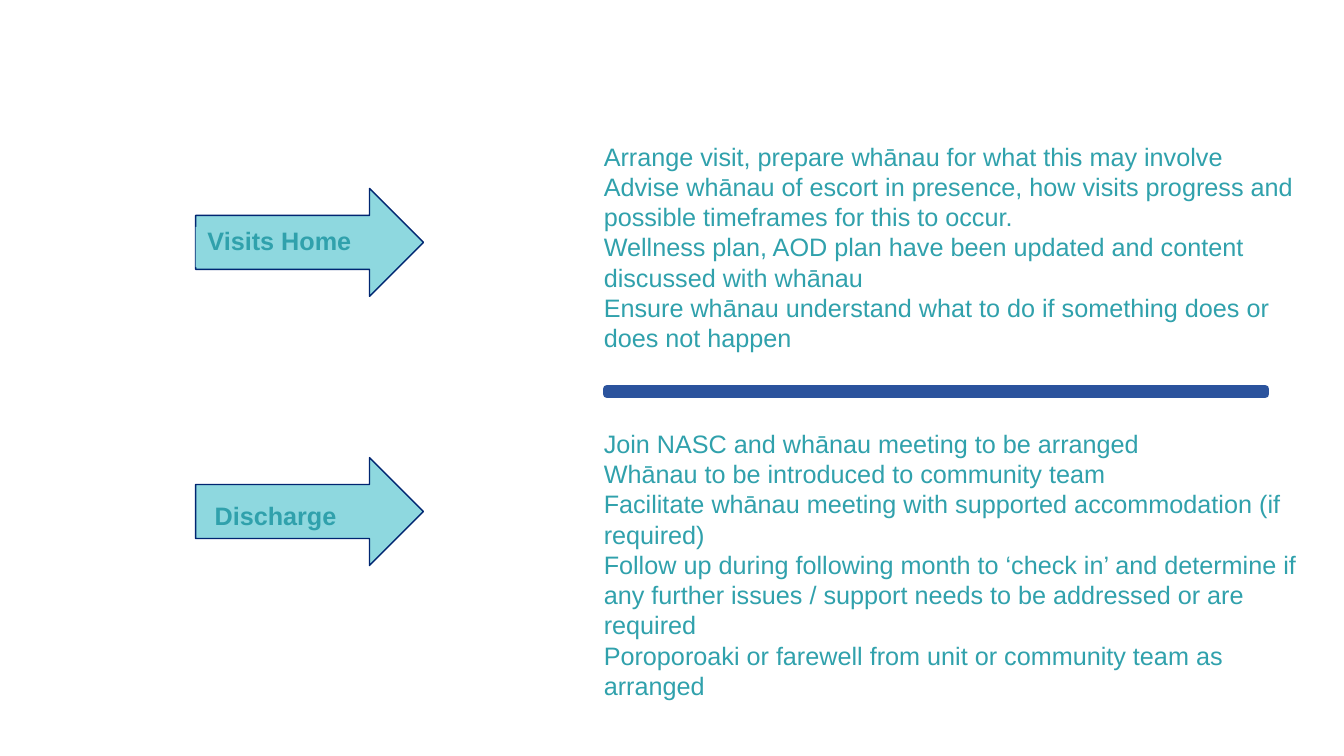
import pptx
import pptx.util
import pptx.dml.color
import pptx.enum.shapes
import pptx.enum.text
from lxml import etree

Inches = pptx.util.Inches
SHAPES = pptx.enum.shapes.MSO_SHAPE

TEAL, AQUA, NAVY, BLUE = "30A1AC", "8ED8DF", "002671", "2B539D"

STAGES = [
    {
        "label": "Visits Home",
        "arrow_top": 1.87,
        "label_box": (1.96, 2.19, 1.77, 0.4),
        "patches": [(1.94, 2.25, 1.97, 0.4)],
        "steps_box": (5.89, 1.35, 7.3, 2.22),
        "steps": [
            "Arrange visit, prepare whānau for what this may involve",
            "Advise whānau of escort in presence, how visits progress and possible timeframes for this to occur.",
            "Wellness plan, AOD plan have been updated and content discussed with whānau",
            "Ensure whānau understand what to do if something does or does not happen",
        ],
    },
    {
        "label": "Discharge",
        "arrow_top": 4.54,
        "label_box": (2.03, 4.91, 1.59, 0.4),
        "patches": [],
        "steps_box": (5.89, 4.2, 7.27, 2.83),
        "steps": [
            "Join NASC and whānau meeting to be arranged",
            "Whānau to be introduced to community team",
            "Facilitate whānau meeting with supported accommodation (if required)",
            "Follow up during following month to ‘check in’ and determine if any further issues / support needs to be addressed or are required",
            "Poroporoaki or farewell from unit or community team as arranged",
        ],
    },
]
ARROW_LEFT, ARROW_WIDTH, ARROW_HEIGHT = 1.94, 2.26, 1.07
DIVIDER = (6.02, 3.86, 6.53, 0.05)


def color(hex_code):
    return pptx.dml.color.RGBColor.from_string(hex_code)


def add_filled(slide, kind, box, fill, line=None, width=1):
    shape = slide.shapes.add_shape(kind, *map(Inches, box))
    shape.shadow.inherit = False
    shape.fill.solid()
    shape.fill.fore_color.rgb = color(fill)
    if line:
        shape.line.color.rgb = color(line)
        shape.line.width = pptx.util.Pt(width)
    else:
        shape.line.fill.background()
    return shape


def write(shape, lines, bold=False):
    frame = shape.text_frame
    frame.word_wrap = True
    frame.vertical_anchor = pptx.enum.text.MSO_ANCHOR.TOP
    for index, line in enumerate(lines):
        paragraph = frame.add_paragraph() if index else frame.paragraphs[0]
        paragraph.alignment = pptx.enum.text.PP_ALIGN.LEFT
        run = paragraph.add_run()
        run.text = line
        run.font.name = "Arial"
        run.font.size = pptx.util.Pt(18)
        run.font.bold = bold
        run.font.color.rgb = color(TEAL)


def add_stage(slide, stage):
    arrow_box = (ARROW_LEFT, stage["arrow_top"], ARROW_WIDTH, ARROW_HEIGHT)
    add_filled(slide, SHAPES.RIGHT_ARROW, arrow_box, AQUA, NAVY)
    for patch in stage["patches"]:
        add_filled(slide, SHAPES.RECTANGLE, patch, AQUA)
    label = add_filled(slide, SHAPES.RECTANGLE, stage["label_box"], AQUA)
    write(label, [stage["label"]], bold=True)
    steps = slide.shapes.add_textbox(*map(Inches, stage["steps_box"]))
    write(steps, stage["steps"])


def main():
    deck = pptx.Presentation()
    deck.slide_width, deck.slide_height = Inches(13.33), Inches(7.5)
    slide = deck.slides.add_slide(deck.slide_layouts[6])
    for stage in STAGES:
        add_stage(slide, stage)
    divider = add_filled(slide, SHAPES.RECTANGLE, DIVIDER, BLUE, BLUE, 6)
    outline = divider.line.fill._xPr
    etree.SubElement(outline, pptx.oxml.ns.qn("a:round"))
    deck.save("out.pptx")


if __name__ == "__main__":
    main()
